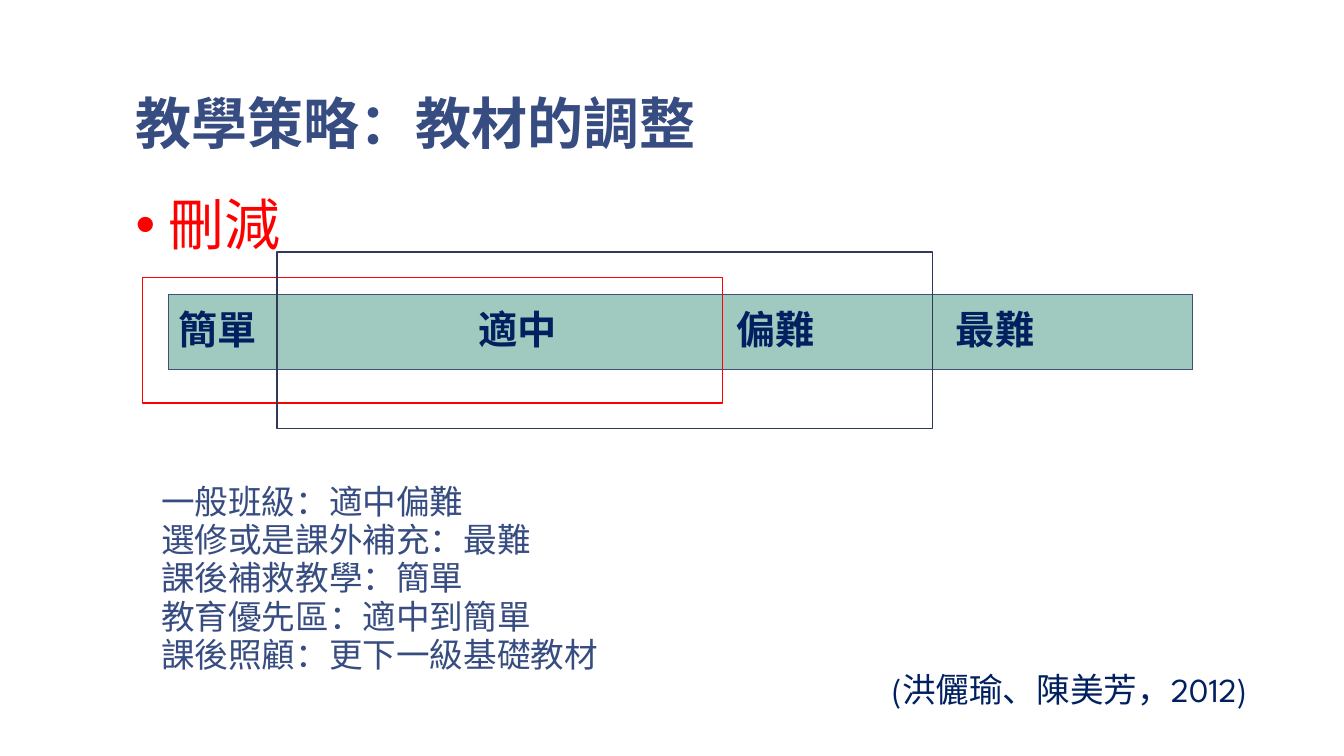
"""Build a slide on trimming teaching material by difficulty level."""
from lxml.etree import SubElement
from pptx import Presentation
from pptx.dml.color import RGBColor
from pptx.enum.shapes import MSO_SHAPE as Shape
from pptx.enum.text import MSO_ANCHOR as Anchor, MSO_AUTO_SIZE as AutoSize
from pptx.oxml import parse_xml
from pptx.oxml.ns import nsdecls, qn
from pptx.util import Emu, Inches, Pt

COLORS = {"title": "374C81", "red": "FF0000", "navy": "002060",
          "bar": "A0CAC0", "edge": "414E77", "frame": "303A58"}
HEAD, BODY = "Arial", "League Spartan"
COLUMNS, ROWS = 160, 90
UNIT = Inches(1) // 12

TEXTS = [
    {"at": (14.6, 7, 133.3, 12.4), "lines": ["教學策略：教材的調整"], "font": HEAD,
     "size": 40, "color": "title", "bold": True, "spacing": 0.85,
     "insets": (0.13, 0.07), "anchor": Anchor.BOTTOM},
    {"at": (14.6, 22.3, 133.3, 34.7), "lines": ["刪減"], "font": HEAD,
     "size": 40, "color": "red", "spacing": 0.95, "insets": (0.13, 0.07), "bullet": "•"},
    {"at": (18, 57, 70, 24.2), "font": BODY, "size": 24, "color": "title",
     "spacing": 0.95, "fit": AutoSize.SHAPE_TO_FIT_TEXT,
     "lines": ["一般班級：適中偏難", "選修或是課外補充：最難", "課後補救教學：簡單",
               "教育優先區：適中到簡單", "課後照顧：更下一級基礎教材"]},
    {"at": (105, 79, 46.7, 6), "lines": ["(洪儷瑜、陳美芳，2012)"], "font": BODY,
     "size": 24, "color": "navy", "wrap": False, "fit": AutoSize.SHAPE_TO_FIT_TEXT},
]
BAR = (20, 35, 122, 9)
LEVELS = [("簡單", 0), ("適中", 35.8), ("偏難", 66.5), ("最難", 92.6)]
FRAMES = [((17, 33, 69, 15), "red"), ((33, 30, 78, 21), "frame")]


def place(cells):
    return [Emu(round(cell * UNIT)) for cell in cells]


def rgb(name):
    return RGBColor.from_string(COLORS[name])


def add_span(para, text, font, size, color, bold=False):
    span = para.add_run()
    span.text = text
    span.font.name, span.font.size, span.font.bold = font, Pt(size), bold
    span.font.color.rgb = rgb(color)


def add_bullet(para, mark):
    props = para._p.get_or_add_pPr()
    props.set("marL", str(Inches(0.33)))
    props.set("indent", str(-Inches(0.33)))
    SubElement(props, qn("a:buFont")).set("typeface", HEAD)
    SubElement(props, qn("a:buChar")).set("char", mark)


def add_text(page, item):
    frame = page.shapes.add_textbox(*place(item["at"])).text_frame
    frame.word_wrap = item.get("wrap", True)
    frame.auto_size = item.get("fit", AutoSize.NONE)
    frame.vertical_anchor = item.get("anchor", Anchor.TOP)
    side, edge = item.get("insets", (0.1, 0.05))
    frame.margin_left = frame.margin_right = Inches(side)
    frame.margin_top = frame.margin_bottom = Inches(edge)
    for index, line in enumerate(item["lines"]):
        para = frame.add_paragraph() if index else frame.paragraphs[0]
        if "bullet" in item:
            add_bullet(para, item["bullet"])
        para.line_spacing = item.get("spacing", 1.0)
        add_span(para, line, item["font"], item["size"], item["color"], item.get("bold", False))


def add_bar(page):
    table = page.shapes.add_table(1, 1, *place(BAR)).table
    table.first_row = table.horz_banding = False
    cell = table.cell(0, 0)
    cell.fill.solid()
    cell.fill.fore_color.rgb = rgb("bar")
    props = cell._tc.get_or_add_tcPr()
    for index, side in enumerate("LRTB"):
        props.insert(index, parse_xml(
            f'<a:ln{side} {nsdecls("a")} w="{Pt(0.5)}"><a:solidFill>'
            f'<a:srgbClr val="{COLORS["edge"]}"/></a:solidFill></a:ln{side}>'))
    para = cell.text_frame.paragraphs[0]
    stops = SubElement(para._p.get_or_add_pPr(), qn("a:tabLst"))
    for label, offset in LEVELS:
        if offset:
            stop = SubElement(stops, qn("a:tab"))
            stop.set("pos", str(round(offset * UNIT)))
            stop.set("algn", "l")
        add_span(para, "\t" + label if offset else label, BODY, 28, "navy", True)


def add_frame(page, cells, color):
    box = page.shapes.add_shape(Shape.RECTANGLE, *place(cells))
    box.shadow.inherit = False
    box.fill.background()
    box.line.color.rgb = rgb(color)
    box.line.width = Pt(1)


def main():
    deck = Presentation()
    deck.slide_width, deck.slide_height = place((COLUMNS, ROWS))
    page = deck.slides.add_slide(deck.slide_layouts[6])
    for item in TEXTS[:2]:
        add_text(page, item)
    add_bar(page)
    for cells, color in FRAMES:
        add_frame(page, cells, color)
    for item in TEXTS[2:]:
        add_text(page, item)
    deck.save("out.pptx")


if __name__ == "__main__":
    main()
